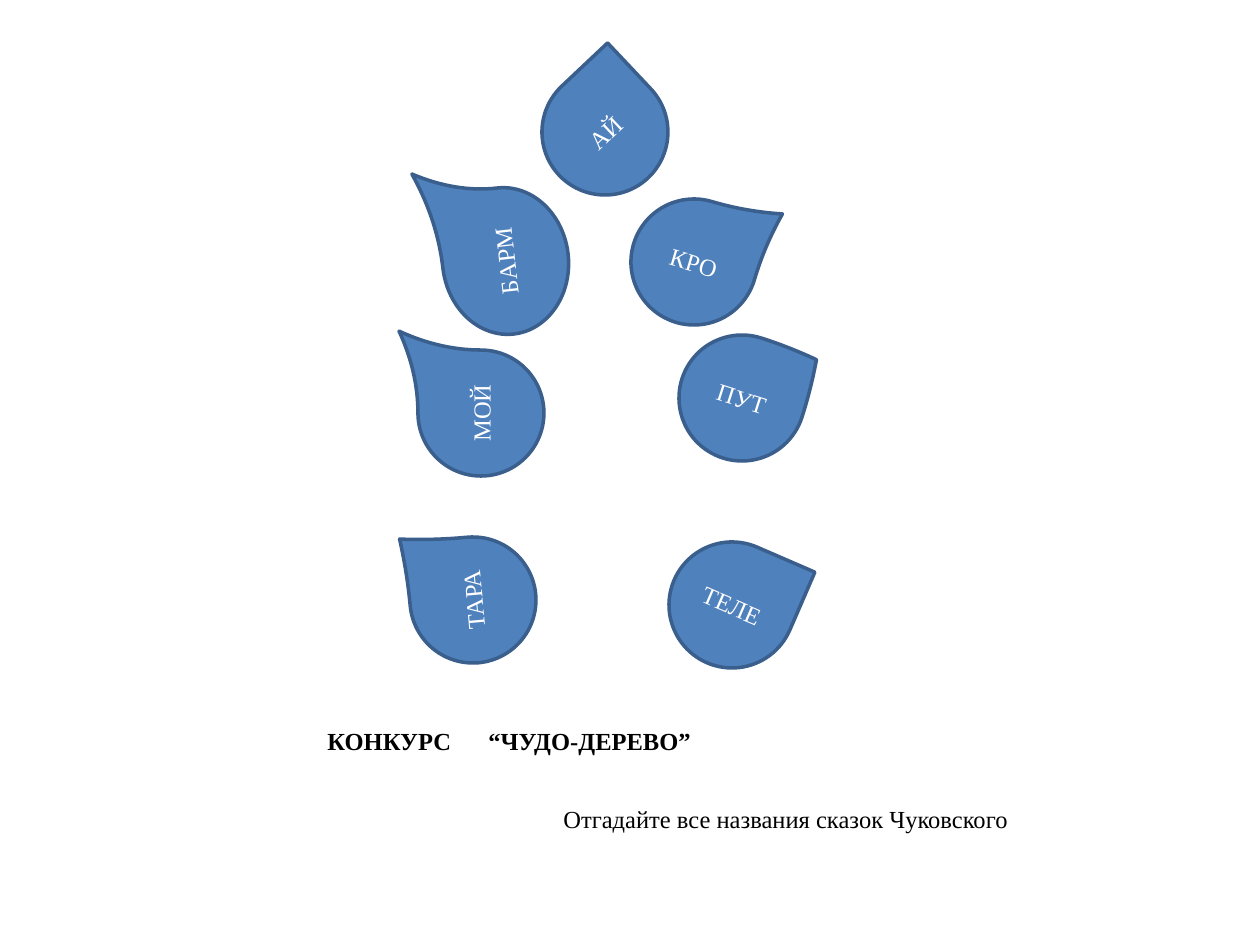
import pptx
import pptx.dml.color
import pptx.enum.shapes
import pptx.enum.text
import pptx.util
from lxml import etree

EMU_PER_PX = 914400 / 126
FONT = "Times New Roman"
LEAF_SIZE = 126

# word, left, top, width, rotation, stretch of the tip
LEAVES = [
    ("БАРМ", 432, 198, 147, 263.5, 1.32),
    ("КРО", 631, 199, LEAF_SIZE, 16.5, 1.13),
    ("ПУТ", 679, 335, LEAF_SIZE, 17.8, 0.94),
    ("МОЙ", 418, 350, LEAF_SIZE, 270, 1.3),
    ("АЙ", 542, 69, LEAF_SIZE, 316.7, 1),
    ("ТАРА", 410, 537, LEAF_SIZE, 264.7, 1.07),
    ("ТЕЛЕ", 669, 542, LEAF_SIZE, 23.4, 1),
]


def px(length):
    return pptx.util.Emu(round(length * EMU_PER_PX))


def color(value):
    return pptx.dml.color.RGBColor.from_string(value)


def write_text(frame, text, text_color, bold=False, **frame_format):
    """Fill a text frame with one paragraph and return that paragraph."""
    frame_format = {"word_wrap": True, **frame_format}
    for name, value in frame_format.items():
        setattr(frame, name, value)
    paragraph = frame.paragraphs[0]
    run = paragraph.add_run()
    run.text = text
    font_format = {"name": FONT, "size": pptx.util.Pt(14), "bold": bold}
    for name, value in font_format.items():
        setattr(run.font, name, value)
    run.font.color.rgb = color(text_color)
    return paragraph


def add_leaf(slide, word, left, top, width, rotation, tip):
    leaf = slide.shapes.add_shape(
        pptx.enum.shapes.MSO_SHAPE.TEAR,
        px(left), px(top), px(width), px(LEAF_SIZE))
    leaf.adjustments[0] = tip
    leaf.rotation = rotation
    leaf.shadow.inherit = False
    leaf.fill.solid()
    leaf.fill.fore_color.rgb = color("4F81BD")
    leaf.line.color.rgb = color("3A5F8C")
    leaf.line.width = pptx.util.Pt(2)
    label = write_text(
        leaf.text_frame, word, "FFFFFF", margin_left=0, margin_right=0,
        vertical_anchor=pptx.enum.text.MSO_ANCHOR.MIDDLE)
    label.alignment = pptx.enum.text.PP_ALIGN.CENTER


def add_caption(slide, text, left, top, width, height, **text_format):
    box = slide.shapes.add_textbox(px(left), px(top), px(width), px(height))
    return write_text(box.text_frame, text, "000000", **text_format)


def add_tab_stop(paragraph, position):
    namespace = "{http://schemas.openxmlformats.org/drawingml/2006/main}"
    properties = paragraph._p.get_or_add_pPr()
    stops = etree.SubElement(properties, namespace + "tabLst")
    etree.SubElement(stops, namespace + "tab", pos=str(px(position)), algn="l")


def main():
    deck = pptx.Presentation()
    deck.slide_width, deck.slide_height = px(1260), px(945)
    slide = deck.slides.add_slide(deck.slide_layouts[6])

    # Leaves of the wonder tree
    for leaf in LEAVES:
        add_leaf(slide, *leaf)

    # Contest title, its two parts set apart by a tab, and the task
    title = add_caption(
        slide, "КОНКУРС\t“ЧУДО-ДЕРЕВО”", 315, 685, 462, 112, bold=True,
        vertical_anchor=pptx.enum.text.MSO_ANCHOR.MIDDLE)
    add_tab_stop(title, 161)
    add_caption(slide, "Отгадайте все названия сказок Чуковского",
                551, 798, 620, 43)

    deck.save("out.pptx")


if __name__ == "__main__":
    main()
